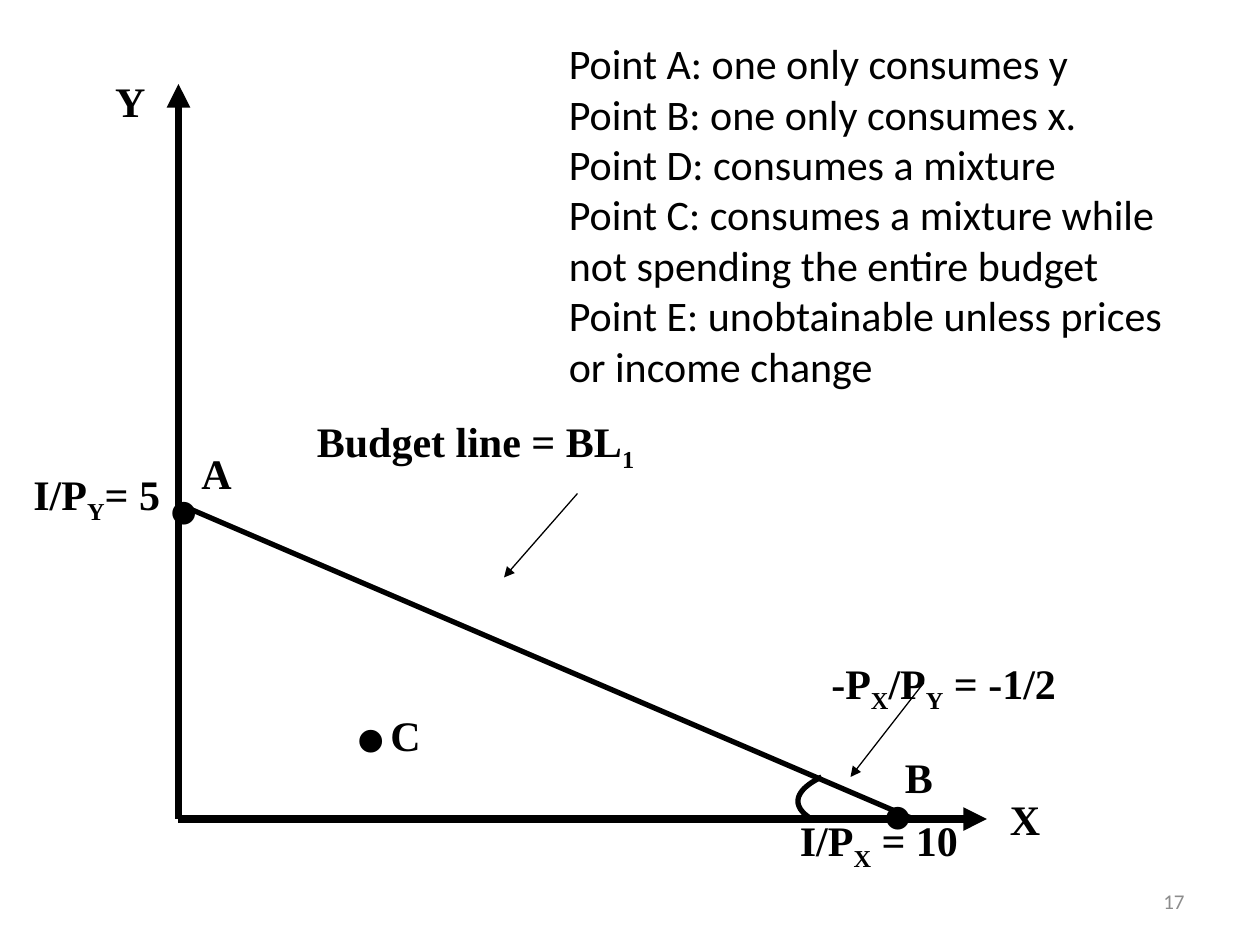
from dataclasses import dataclass

from lxml import etree
from pptx import Presentation
from pptx.dml.color import RGBColor
from pptx.enum.shapes import MSO_CONNECTOR
from pptx.enum.text import MSO_ANCHOR, MSO_AUTO_SIZE, PP_ALIGN
from pptx.oxml.ns import qn
from pptx.util import Inches, Pt

STRAIGHT = MSO_CONNECTOR.STRAIGHT
MIDDLE = MSO_ANCHOR.MIDDLE
FIT_SHAPE = MSO_AUTO_SIZE.SHAPE_TO_FIT_TEXT
RIGHT = PP_ALIGN.RIGHT

# The slide is a grid of 120 columns by 90 rows
COLUMNS, ROWS = 120, 90
CELL = Inches(10) / COLUMNS
LABEL_HEIGHT = 6
DOT_SIZE = (5.2, 10.8)


@dataclass(frozen=True)
class Theme:
    ink: RGBColor = RGBColor(0, 0, 0)
    muted: RGBColor = RGBColor(0x8C, 0x8C, 0x8C)
    graph_font: str = "Times New Roman"
    body_font: str = "Calibri"
    text_size: int = 24
    dot_size: int = 48
    number_size: int = 12
    axis_width: float = 4.5
    curve_width: float = 3
    pointer_width: float = 0.75


THEME = Theme()
ORIGIN = (17, 78)

NOTES = [
    "Point A: one only consumes y",
    "Point B: one only consumes x.",
    "Point D: consumes a mixture",
    "Point C: consumes a mixture while not spending the entire budget",
    "Point E: unobtainable unless prices or income change",
]

# Text (subscripts between underscores), column, row, width
LABELS = [
    ("Y", 9.8, 6.6, 5.3),
    ("X", 95, 75, 5.3),
    ("A", 18, 42, 5.3),
    ("C", 36, 67, 5.3),
    ("B", 85, 71, 8.9),
    ("I/P_Y_= 5", 2, 44, 14.8),
    ("I/P_X_ = 10", 75, 77, 17.8),
    ("Budget line = BL_1_", 29, 39, 32.8),
    ("-P_X_/P_Y_ = -1/2", 78, 62, 24.2),
]
DOTS = [(15, 43), (32.75, 64.7), (83, 72)]

# Start, end, width, arrowhead
LINES = [
    (ORIGIN, (94, 78), THEME.axis_width, True),
    (ORIGIN, (17, 8), THEME.axis_width, True),
    ((17, 48), (87, 78), THEME.curve_width, False),
    ((55, 47), (48, 55), THEME.pointer_width, True),
    ((88, 65), (81, 74), THEME.pointer_width, True),
]

# Two Bezier curves that mark the angle at B
ANGLE_CURVES = [
    ((77.3, 78), (76.45, 77.5), (76, 76.9), (76, 76.3)),
    ((76, 76.3), (76, 75.5), (76.8, 74.7), (78.25, 74)),
]


def cells(*values):
    return [round(value * CELL) for value in values]


def style_run(run, font, size, color, bold=False):
    run.font.name = font
    run.font.size = Pt(size)
    run.font.color.rgb = color
    run.font.bold = bold


def add_text_box(slide, left, top, width, height, wrap=True):
    frame = slide.shapes.add_textbox(*cells(left, top, width, height)).text_frame
    frame.word_wrap = wrap
    return frame


def add_label(slide, text, left, top, width, height=LABEL_HEIGHT, size=THEME.text_size):
    frame = add_text_box(slide, left, top, width, height, wrap=False)
    frame.auto_size = FIT_SHAPE
    for index, part in enumerate(text.split("_")):
        if part:
            run = frame.paragraphs[0].add_run()
            run.text = part
            style_run(run, THEME.graph_font, size, THEME.ink, bold=True)
            if index % 2:
                run.font._element.set("baseline", "-25000")


def add_notes_text(slide):
    frame = add_text_box(slide, 53, 3, 60, 35.2)
    frame.auto_size = FIT_SHAPE
    frame.text = "\n".join(NOTES)
    for paragraph in frame.paragraphs:
        style_run(paragraph.runs[0], THEME.body_font, THEME.text_size, THEME.ink)


def add_slide_number(slide, number):
    frame = add_text_box(slide, 86, 83.4, 28, 4.8)
    frame.vertical_anchor = MIDDLE
    frame.text = number
    paragraph = frame.paragraphs[0]
    paragraph.alignment = RIGHT
    style_run(paragraph.runs[0], THEME.body_font, THEME.number_size, THEME.muted)


def add_line(slide, start, end, width, arrow):
    connector = slide.shapes.add_connector(STRAIGHT, *cells(*start, *end))
    connector.line.color.rgb = THEME.ink
    connector.line.width = Pt(width)
    properties = connector._element.spPr
    if arrow:
        etree.SubElement(properties.find(qn("a:ln")), qn("a:tailEnd"), type="triangle")
    etree.SubElement(properties, qn("a:effectLst"))


def bezier_points(curve, steps=12):
    for step in range(steps + 1):
        t = step / steps
        weights = ((1 - t) ** 3, 3 * t * (1 - t) ** 2, 3 * t**2 * (1 - t), t**3)
        yield cells(*(sum(w * p[axis] for w, p in zip(weights, curve)) for axis in (0, 1)))


def add_angle_arc(slide):
    points = [point for curve in ANGLE_CURVES for point in bezier_points(curve)]
    builder = slide.shapes.build_freeform(*points[0])
    builder.add_line_segments(points[1:], close=False)
    arc = builder.convert_to_shape()
    arc.shadow.inherit = False
    arc.fill.background()
    arc.line.color.rgb = THEME.ink
    arc.line.width = Pt(THEME.curve_width)


def main():
    presentation = Presentation()
    presentation.slide_width, presentation.slide_height = cells(COLUMNS, ROWS)
    slide = presentation.slides.add_slide(presentation.slide_layouts[6])

    add_slide_number(slide, "17")

    # Axes, budget line and pointers
    for line in LINES:
        add_line(slide, *line)
    add_angle_arc(slide)

    # Points and labels
    for left, top in DOTS:
        add_label(slide, "•", left, top, *DOT_SIZE, size=THEME.dot_size)
    for label in LABELS:
        add_label(slide, *label)

    add_notes_text(slide)
    presentation.save("out.pptx")


if __name__ == "__main__":
    main()
